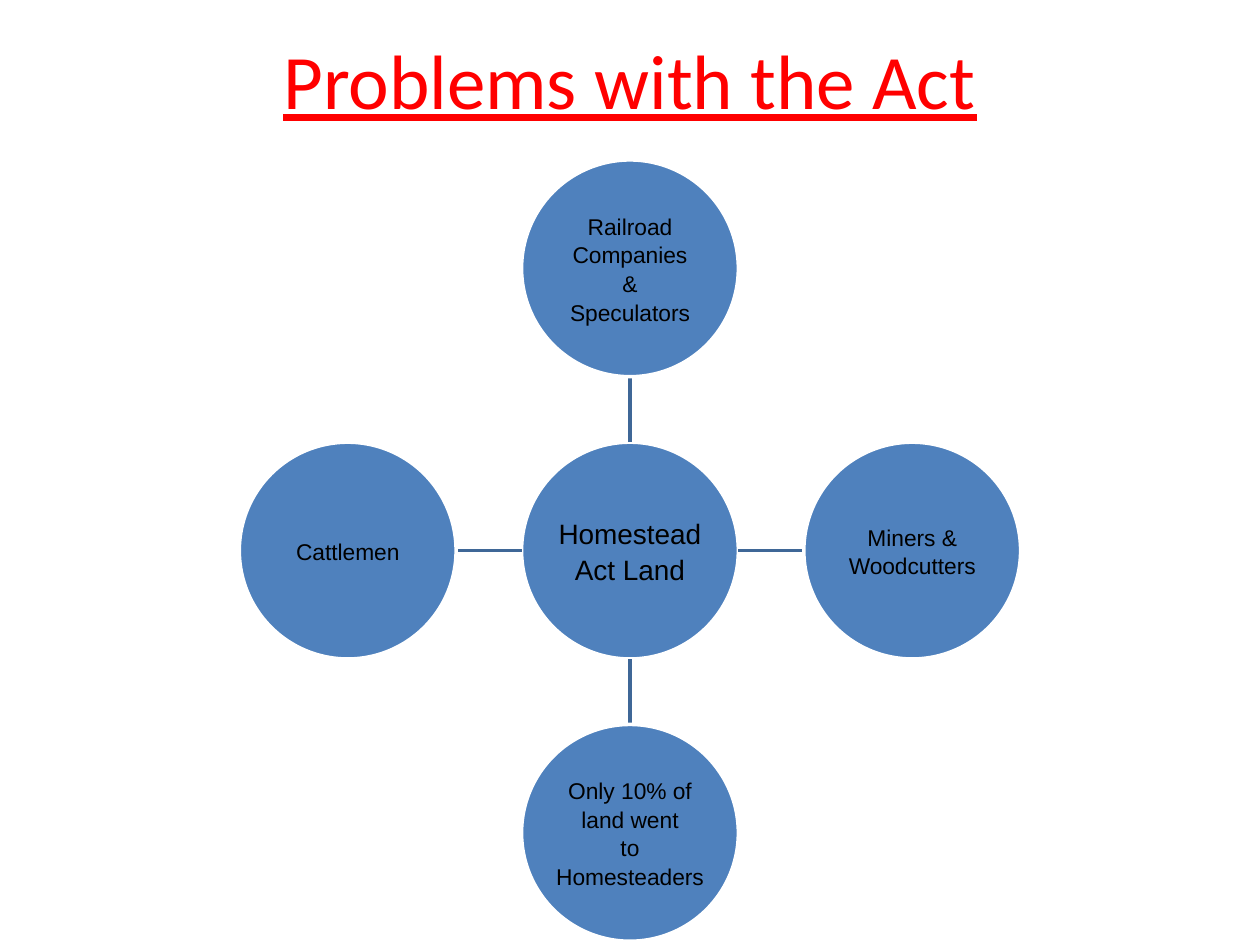
"""Build a slide showing who took the Homestead Act land."""
from dataclasses import dataclass

from lxml.etree import SubElement
from pptx import Presentation
from pptx.dml.color import RGBColor
from pptx.enum.shapes import MSO_CONNECTOR, MSO_SHAPE
from pptx.enum.text import MSO_ANCHOR, PP_ALIGN
from pptx.oxml.ns import qn
from pptx.util import Cm, Pt


@dataclass(frozen=True)
class Theme:
    title: RGBColor = RGBColor(0xFF, 0x00, 0x00)
    text: RGBColor = RGBColor(0x00, 0x00, 0x00)
    circle: RGBColor = RGBColor(0x4F, 0x81, 0xBD)
    outline: RGBColor = RGBColor(0xFF, 0xFF, 0xFF)
    spoke: RGBColor = RGBColor(0x3F, 0x67, 0x97)
    title_font: str = "Calibri"
    body_font: str = "Arial"
    title_size: Pt = Pt(44)
    hub_size: Pt = Pt(16)
    outer_size: Pt = Pt(13)
    line_width: Pt = Pt(2)


theme = Theme()
CENTER_X, CENTER_Y = 12.7, 11.1
DIAMETER, STEP = 4.37, 5.69
RADIUS = DIAMETER / 2


def add_run(p, text, font, size, color):
    p.alignment = PP_ALIGN.CENTER
    r = p.add_run()
    r.text = text
    r.font.name = font
    r.font.size = size
    r.font.color.rgb = color
    return r


def add_circle(s, x, y, lines, size):
    sp = s.shapes.add_shape(MSO_SHAPE.OVAL, Cm(x - RADIUS), Cm(y - RADIUS),
                            Cm(DIAMETER), Cm(DIAMETER))
    sp.shadow.inherit = False
    sp.fill.solid()
    sp.fill.fore_color.rgb = theme.circle
    sp.line.color.rgb = theme.outline
    sp.line.width = theme.line_width
    tf = sp.text_frame
    tf.word_wrap = True
    tf.vertical_anchor = MSO_ANCHOR.MIDDLE
    tf.margin_left = tf.margin_right = tf.margin_top = tf.margin_bottom = Cm(0.02)
    for i, line in enumerate(lines):
        p = tf.add_paragraph() if i else tf.paragraphs[0]
        p.line_spacing = 1.05
        add_run(p, line, theme.body_font, size, theme.text)


prs = Presentation()
prs.slide_width, prs.slide_height = Cm(25.4), Cm(19.05)
s = prs.slides.add_slide(prs.slide_layouts[5])

title = s.shapes.title
title.left, title.top, title.width, title.height = Cm(1.27), Cm(0), Cm(22.86), Cm(3.18)
tf = title.text_frame
tf.vertical_anchor = MSO_ANCHOR.MIDDLE
r = add_run(tf.paragraphs[0], "Problems with the Act",
            theme.title_font, theme.title_size, theme.title)
r.font.underline = True

add_circle(s, CENTER_X, CENTER_Y, ["Homestead Act Land"], theme.hub_size)

groups = [
    (0, -1, ["Railroad Companies", "&", "Speculators"]),
    (1, 0, ["Miners & Woodcutters"]),
    (0, 1, ["Only 10% of land went", "to Homesteaders"]),
    (-1, 0, ["Cattlemen"]),
]
for dx, dy, lines in groups:
    near, far = RADIUS, STEP - RADIUS
    spoke = s.shapes.add_connector(
        MSO_CONNECTOR.STRAIGHT,
        Cm(CENTER_X + dx * near), Cm(CENTER_Y + dy * near),
        Cm(CENTER_X + dx * far), Cm(CENTER_Y + dy * far))
    spoke.line.color.rgb = theme.spoke
    spoke.line.width = theme.line_width
    SubElement(spoke._element.spPr, qn("a:effectLst"))
    add_circle(s, CENTER_X + dx * STEP, CENTER_Y + dy * STEP, lines, theme.outer_size)

prs.save("out.pptx")
